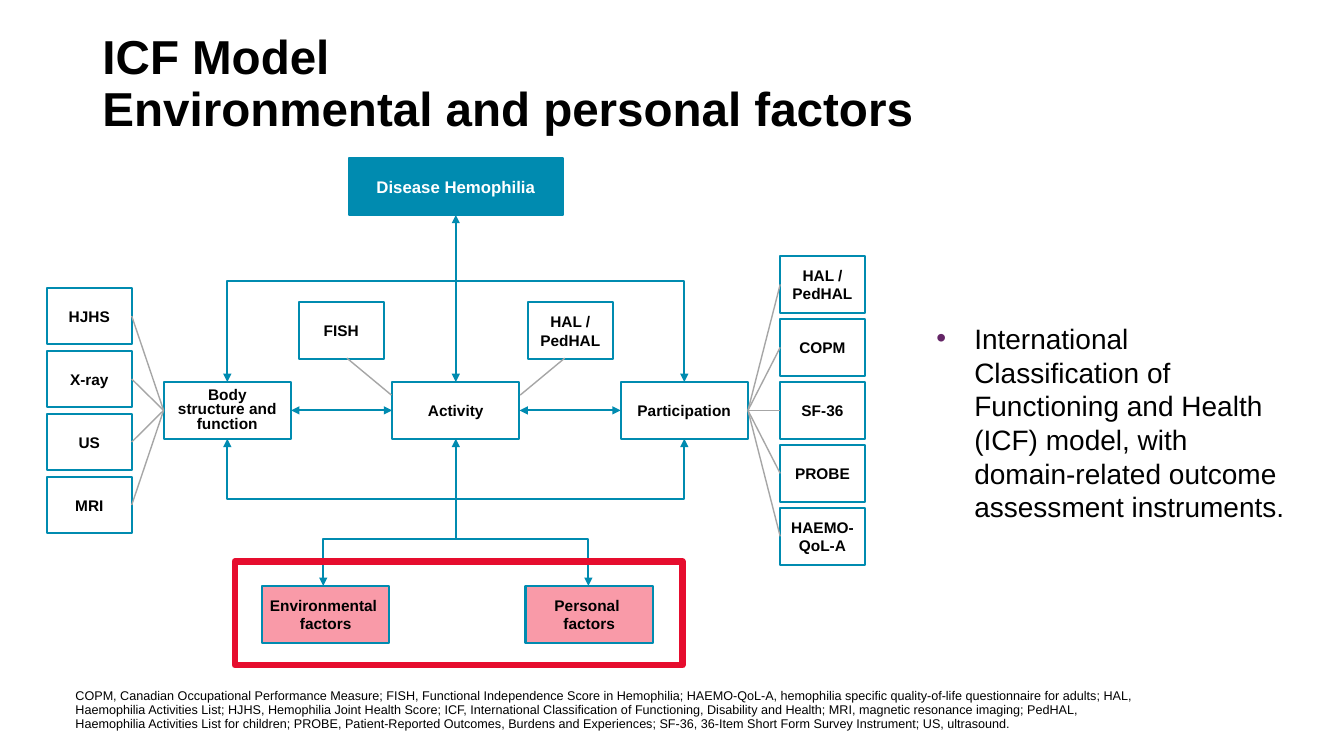
import pptx
import pptx.dml.color
import pptx.enum.shapes
import pptx.enum.text
import pptx.oxml.ns
import pptx.util
from lxml import etree

Pt = pptx.util.Pt
PP_ALIGN = pptx.enum.text.PP_ALIGN
ANCHOR = pptx.enum.text.MSO_ANCHOR
AUTO_SIZE = pptx.enum.text.MSO_AUTO_SIZE

TITLE = "ICF Model\nEnvironmental and personal factors"
SUMMARY = ("International Classification of Functioning and Health (ICF) model, "
           "with domain-related outcome assessment instruments.")
ABBREVIATIONS = (
    "COPM, Canadian Occupational Performance Measure; FISH, Functional Independence Score in "
    "Hemophilia; HAEMO-QoL-A, hemophilia specific quality-of-life questionnaire for adults; HAL, "
    "Haemophilia Activities List; HJHS, Hemophilia Joint Health Score; ICF, International "
    "Classification of Functioning, Disability and Health; MRI, magnetic resonance imaging; PedHAL, "
    "Haemophilia Activities List for children; PROBE, Patient-Reported Outcomes, Burdens and "
    "Experiences; SF-36, 36-Item Short Form Survey Instrument; US, ultrasound.")
DISEASE = "Disease Hemophilia"
DOMAINS = [("Body structure and function", 0.8), ("Activity", None), ("Participation", None)]
BODY_INSTRUMENTS = ["HJHS", "X-ray", "US", "MRI"]
ACTIVITY_INSTRUMENTS = ["FISH", "HAL / PedHAL"]
PARTICIPATION_INSTRUMENTS = ["HAL / PedHAL", "COPM", "SF-36", "PROBE", "HAEMO-QoL-A"]
FACTORS = [("Environmental \nfactors", 187.2, 0), ("Personal \nfactors", 375.4, 7.2)]

COLORS = {"teal": "008BB0", "grey": "A6A6A6", "pink": "F99AA8", "red": "E60D2E",
          "purple": "642566", "white": "FFFFFF", "black": "000000"}

CENTER_X = 325.6
DOMAIN_Y, DOMAIN_W, DOMAIN_STEP = 272.9, 91, 163.2
INSTRUMENT_W, INSTRUMENT_STEP = 60.5, 45
BOX_H = 40.5
TOP, LEFT, BOTTOM, RIGHT = range(4)

prs = pptx.Presentation()
prs.slide_width, prs.slide_height = Pt(960), Pt(540)
slide = prs.slides.add_slide(prs.slide_layouts[1])
shapes = slide.shapes


def rgb(name):
    return pptx.dml.color.RGBColor.from_string(COLORS[name])


def place(shape, x, y, w, h):
    shape.left, shape.top, shape.width, shape.height = Pt(x), Pt(y), Pt(w), Pt(h)


def write(shape, text, size, color="black", bold=False, align=PP_ALIGN.LEFT, anchor=ANCHOR.MIDDLE,
          spacing=None, side_inset=7.2, bottom_inset=3.6, bullet=None, fit=AUTO_SIZE.NONE):
    frame = shape.text_frame
    frame.word_wrap = True
    frame.auto_size = fit
    frame.vertical_anchor = anchor
    frame.margin_left = frame.margin_right = Pt(side_inset)
    frame.margin_top, frame.margin_bottom = Pt(3.6), Pt(bottom_inset)
    paragraph = frame.paragraphs[0]
    paragraph.text = text
    paragraph.alignment = align
    paragraph.space_before = Pt(0)
    if spacing:
        paragraph.line_spacing = spacing
    if bullet:
        props = paragraph._p.get_or_add_pPr()
        props.set("marL", str(Pt(27)))
        props.set("indent", str(-Pt(27)))
        bullet_color = etree.SubElement(props, pptx.oxml.ns.qn("a:buClr"))
        etree.SubElement(bullet_color, pptx.oxml.ns.qn("a:srgbClr"), val=COLORS[bullet])
        etree.SubElement(props, pptx.oxml.ns.qn("a:buChar"), char="•")
    for run in paragraph.runs:
        run.font.name, run.font.size, run.font.bold = "Arial", Pt(size), bold
        run.font.color.rgb = rgb(color)


def add_rect(x, y, w, h, fill=None, line="teal", weight=1.5):
    rect = shapes.add_shape(pptx.enum.shapes.MSO_SHAPE.RECTANGLE, Pt(x), Pt(y), Pt(w), Pt(h))
    rect.shadow.inherit = False
    if fill:
        rect.fill.solid()
        rect.fill.fore_color.rgb = rgb(fill)
    else:
        rect.fill.background()
    rect.line.color.rgb, rect.line.width = rgb(line), Pt(weight)
    return rect


def add_box(text, x, y, w=INSTRUMENT_W, h=BOX_H, fill="white", size=11, **text_format):
    box = add_rect(x, y, w, h, fill)
    write(box, text, size, bold=True, align=PP_ALIGN.CENTER, **text_format)
    return box


def style_line(line_shape, color, weight, arrows):
    """Arrows lists the ends that carry a head: headEnd, tailEnd."""
    line_shape.line.color.rgb, line_shape.line.width = rgb(color), Pt(weight)
    for end in arrows:
        etree.SubElement(line_shape.line._get_or_add_ln(), pptx.oxml.ns.qn("a:" + end),
                         type="triangle")


def connect(start, end, color="grey", weight=1, arrows=()):
    """Each end is a (box, side) pair or an (x, y) point."""
    points = [(0, 0) if hasattr(e[0], "shape_id") else e for e in (start, end)]
    line = shapes.add_connector(pptx.enum.shapes.MSO_CONNECTOR.STRAIGHT,
                                *[Pt(v) for point in points for v in point])
    if hasattr(start[0], "shape_id"):
        line.begin_connect(*start)
    if hasattr(end[0], "shape_id"):
        line.end_connect(*end)
    style_line(line, color, weight, arrows)
    etree.SubElement(line._element.spPr, pptx.oxml.ns.qn("a:effectLst"))


def add_elbow(y, target_x, target_y):
    """Arrow from the centre axis sideways at y, then up or down to the target."""
    builder = shapes.build_freeform(Pt(CENTER_X), Pt(y))
    builder.add_line_segments([(Pt(target_x), Pt(y)), (Pt(target_x), Pt(target_y))], close=False)
    elbow = builder.convert_to_shape()
    elbow.shadow.inherit = False
    elbow.fill.background()
    style_line(elbow, "teal", 1.5, ["tailEnd"])


def add_instruments(names, x, y):
    return [add_box(name, x, y + i * INSTRUMENT_STEP) for i, name in enumerate(names)]


# Text
place(shapes.title, 66, 18, 828, 85.7)
write(shapes.title, TITLE, 34, bold=True, spacing=0.9)
summary = slide.placeholders[1]
place(summary, 661.7, 226.1, 266.4, 152.6)
write(summary, SUMMARY, 20, anchor=ANCHOR.TOP, bullet="purple", fit=AUTO_SIZE.SHAPE_TO_FIT_TEXT)
footnote = shapes.add_textbox(Pt(46.8), Pt(493.2), Pt(781.2), Pt(28.8))
write(footnote, ABBREVIATIONS, 9, anchor=ANCHOR.BOTTOM, spacing=0.9, bottom_inset=0)

# Boxes
disease = add_box(DISEASE, CENTER_X - 76.3, 113, 152.6, 40.5, fill="teal", size=12, color="white")
body, activity, participation = [
    add_box(text, CENTER_X + (i - 1) * DOMAIN_STEP - DOMAIN_W / 2, DOMAIN_Y, DOMAIN_W,
            spacing=spacing)
    for i, (text, spacing) in enumerate(DOMAINS)]
body_instruments = add_instruments(BODY_INSTRUMENTS, 33.6, 205.5)
participation_instruments = add_instruments(PARTICIPATION_INSTRUMENTS, 557.3, 182.9)
for side, name in zip((-1, 1), ACTIVITY_INSTRUMENTS):
    add_box(name, CENTER_X + side * 81.8 - INSTRUMENT_W / 2, 216)
    connect((CENTER_X + side * 77.8, 255.8), (CENTER_X + side * 46, 282.2))
for text, x, inset in FACTORS:
    add_box(text, x, 418.5, DOMAIN_W, fill="pink", side_inset=inset)

# Connections
for instrument in body_instruments:
    connect((instrument, RIGHT), (body, LEFT))
for instrument in participation_instruments:
    connect((participation, RIGHT), (instrument, LEFT))
BOTH = ("headEnd", "tailEnd")
connect((disease, BOTTOM), (activity, TOP), "teal", 1.5, BOTH)
connect((body, RIGHT), (activity, LEFT), "teal", 1.5, BOTH)
connect((activity, RIGHT), (participation, LEFT), "teal", 1.5, BOTH)
connect((activity, BOTTOM), (CENTER_X, 385.2), "teal", 1.5, ["headEnd"])
for side in (-1, 1):
    domain_x = CENTER_X + side * DOMAIN_STEP
    add_elbow(201, domain_x, DOMAIN_Y)
    add_elbow(356.4, domain_x, DOMAIN_Y + BOX_H)
    add_elbow(385.2, CENTER_X + side * 94.7, 418.5)

# Highlight around the factors
add_rect(167.8, 401, 319.7, 74.2, line="red", weight=4.5)

prs.save("out.pptx")
